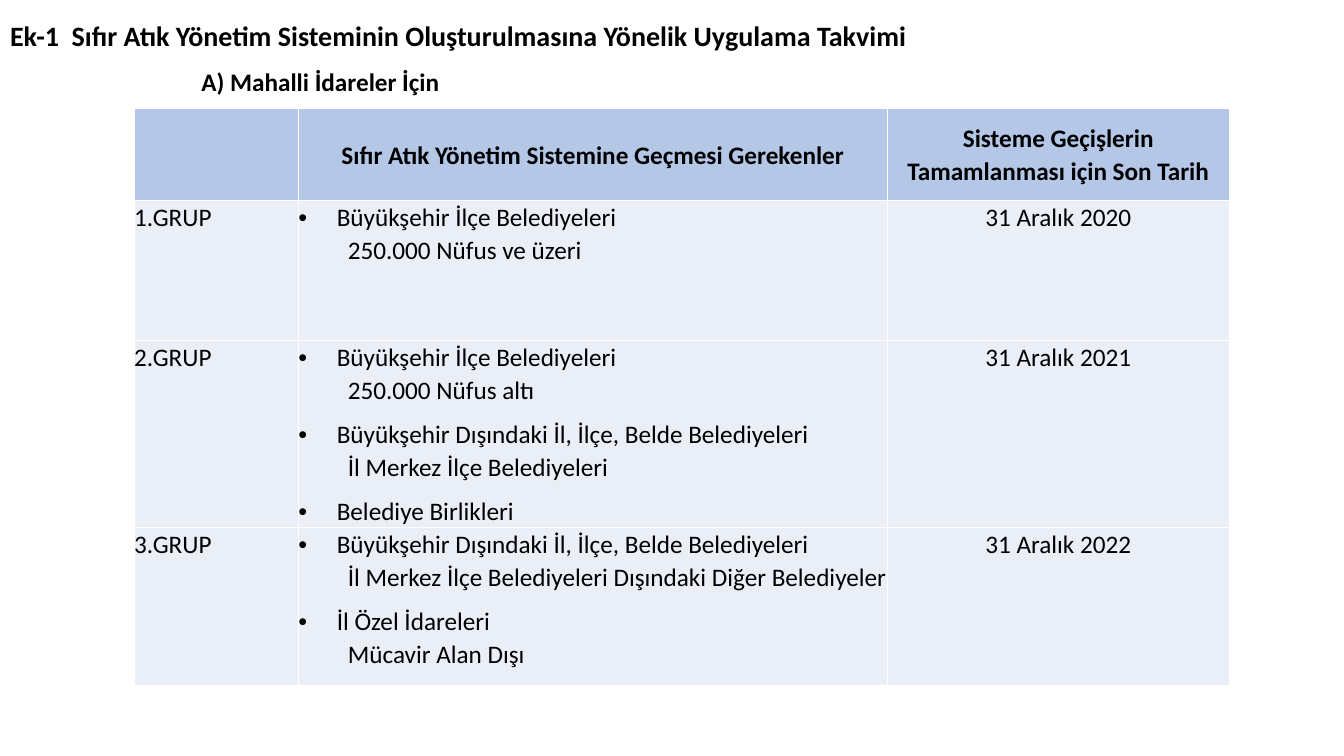
from dataclasses import dataclass

from lxml import etree
from pptx import Presentation
from pptx import util as u
from pptx.dml import color
from pptx.enum import text
from pptx.oxml import ns

SLIDE_WIDTH, SLIDE_HEIGHT = u.Inches(13.333), u.Inches(7.5)
FONT = "Calibri"
BLACK, WHITE, HEADER_BLUE, BODY_BLUE = "000000", "FFFFFF", "B4C7E7", "EAEFF7"
COLUMN_SHARES = (12.23, 43.82, 25.43)
ROW_SHARES = (12.13, 18.53, 23.73, 20.93)
HEADINGS = (
    "",
    "Sıfır Atık Yönetim Sistemine Geçmesi Gerekenler",
    "Sisteme Geçişlerin Tamamlanması için Son Tarih",
)
CENTERED = {"alignment": text.PP_ALIGN.CENTER}
CELL_SPACING = {"line_spacing": 1.07, "space_after": u.Pt(8)}
NO_INSETS = dict.fromkeys(("margin_left", "margin_top", "margin_right", "margin_bottom"), 0)


@dataclass
class Administration:
    name: str
    scope: str = ""


@dataclass
class Group:
    label: str
    administrations: list[Administration]
    deadline: str


GROUPS = [
    Group("1.GRUP", [
        Administration("Büyükşehir İlçe Belediyeleri", "250.000 Nüfus ve üzeri"),
    ], "31 Aralık 2020"),
    Group("2.GRUP", [
        Administration("Büyükşehir İlçe Belediyeleri", "250.000 Nüfus altı"),
        Administration("Büyükşehir Dışındaki İl, İlçe, Belde Belediyeleri", "İl Merkez İlçe Belediyeleri"),
        Administration("Belediye Birlikleri"),
    ], "31 Aralık 2021"),
    Group("3.GRUP", [
        Administration("Büyükşehir Dışındaki İl, İlçe, Belde Belediyeleri",
                       "İl Merkez İlçe Belediyeleri Dışındaki Diğer Belediyeler"),
        Administration("İl Özel İdareleri", "Mücavir Alan Dışı"),
    ], "31 Aralık 2022"),
]


def across(percent: float) -> int:
    return round(SLIDE_WIDTH * percent / 100)


def down(percent: float) -> int:
    return round(SLIDE_HEIGHT * percent / 100)


def rgb(value: str) -> color.RGBColor:
    return color.RGBColor.from_string(value)


def apply(target, formats: dict) -> None:
    for attribute, value in formats.items():
        setattr(target, attribute, value)


def write(paragraph, words: str, size: int = 18, bold: bool = False, **formats) -> None:
    paragraph.text = words
    apply(paragraph, formats)
    for run in paragraph.runs:
        apply(run.font, {"name": FONT, "size": u.Pt(size), "bold": bold})
        run.font.color.rgb = rgb(BLACK)


def indent(paragraph, left: float, first: float = 0, bullet: str = "") -> None:
    properties = paragraph._p.get_or_add_pPr()
    properties.set("marL", str(u.Inches(left)))
    properties.set("indent", str(u.Inches(first)))
    if bullet:
        etree.SubElement(properties, ns.qn("a:buFont"), typeface="Arial")
        etree.SubElement(properties, ns.qn("a:buChar"), char=bullet)


def style_cell(cell, fill: str) -> None:
    apply(cell, NO_INSETS)
    cell.fill.solid()
    cell.fill.fore_color.rgb = rgb(fill)
    properties = cell._tc.get_or_add_tcPr()
    for position, side in enumerate(("lnL", "lnR", "lnT", "lnB")):
        border = etree.Element(ns.qn(f"a:{side}"), w=str(u.Pt(1)))
        paint = etree.SubElement(border, ns.qn("a:solidFill"))
        etree.SubElement(paint, ns.qn("a:srgbClr"), val=WHITE)
        properties.insert(position, border)


def list_administrations(cell, administrations: list[Administration]) -> None:
    frame = cell.text_frame
    for position, administration in enumerate(administrations):
        name = frame.add_paragraph() if position else frame.paragraphs[0]
        write(name, administration.name, line_spacing=1.07, space_after=u.Pt(0))
        indent(name, 0.38, -0.38, "•")
        if administration.scope:
            scope = frame.add_paragraph()
            write(scope, administration.scope, **CELL_SPACING)
            indent(scope, 0.49)


def add_calendar(slide) -> None:
    calendar = slide.shapes.add_table(
        len(ROW_SHARES), len(COLUMN_SHARES), across(9.98), down(14.4),
        across(sum(COLUMN_SHARES)), down(sum(ROW_SHARES))).table
    for column, share in zip(calendar.columns, COLUMN_SHARES):
        column.width = across(share)
    for row, share in zip(calendar.rows, ROW_SHARES):
        row.height = down(share)
    for position, heading in enumerate(HEADINGS):
        cell = calendar.cell(0, position)
        style_cell(cell, HEADER_BLUE)
        cell.vertical_anchor = text.MSO_ANCHOR.MIDDLE
        write(cell.text_frame.paragraphs[0], heading, bold=True, **CENTERED, **CELL_SPACING)
    for position, group in enumerate(GROUPS, 1):
        label, members, deadline = calendar.rows[position].cells
        for cell in (label, members, deadline):
            style_cell(cell, BODY_BLUE)
        write(label.text_frame.paragraphs[0], group.label, **CELL_SPACING)
        list_administrations(members, group.administrations)
        write(deadline.text_frame.paragraphs[0], group.deadline, **CENTERED, **CELL_SPACING)


def add_headings(slide) -> None:
    appendix = slide.shapes.title
    apply(appendix, {"left": 0, "top": down(1.87), "width": across(73.82), "height": down(6.27)})
    apply(appendix.text_frame, {"vertical_anchor": text.MSO_ANCHOR.MIDDLE, "word_wrap": True,
                                "auto_size": text.MSO_AUTO_SIZE.NONE})
    write(appendix.text_frame.paragraphs[0],
          "Ek-1  Sıfır Atık Yönetim Sisteminin Oluşturulmasına Yönelik Uygulama Takvimi",
          size=20, bold=True, alignment=text.PP_ALIGN.LEFT, line_spacing=0.9)
    section = slide.shapes.add_textbox(across(14.25), down(8.13), across(28.66), down(5.33))
    apply(section.text_frame, {"word_wrap": True, "auto_size": text.MSO_AUTO_SIZE.SHAPE_TO_FIT_TEXT})
    write(section.text_frame.paragraphs[0], "A) Mahalli İdareler İçin", bold=True)


def main() -> None:
    deck = Presentation()
    apply(deck, {"slide_width": SLIDE_WIDTH, "slide_height": SLIDE_HEIGHT})
    slide = deck.slides.add_slide(deck.slide_layouts[5])
    add_calendar(slide)
    add_headings(slide)
    deck.save("out.pptx")


if __name__ == "__main__":
    main()
